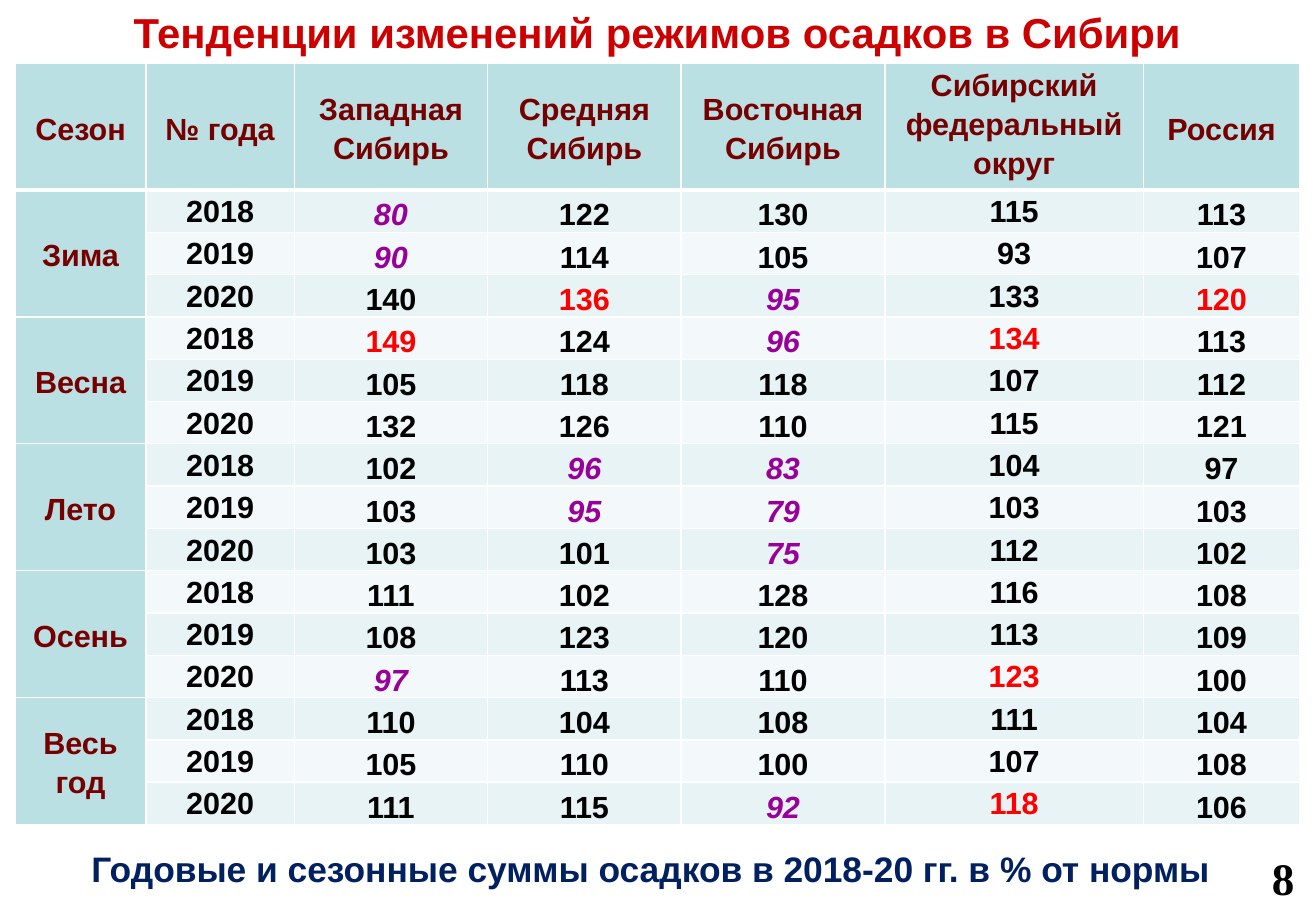
from lxml import etree
from pptx import Presentation
from pptx.dml.color import RGBColor
from pptx.enum.text import MSO_ANCHOR, MSO_AUTO_SIZE, PP_ALIGN
from pptx.oxml.ns import qn
from pptx.util import Inches, Pt

CENTER, JUSTIFY = PP_ALIGN.CENTER, PP_ALIGN.JUSTIFY
TOP, MIDDLE, BOTTOM = MSO_ANCHOR.TOP, MSO_ANCHOR.MIDDLE, MSO_ANCHOR.BOTTOM
NO_FIT, GROW = MSO_AUTO_SIZE.NONE, MSO_AUTO_SIZE.SHAPE_TO_FIT_TEXT
TITLE_ONLY = 5

COLORS = {
    "title": "CC0000",
    "caption": "002060",
    "heading": "760000",
    "text": "000000",
    "high": "FF0000",
    "low": "990099",
    "heading_fill": "BBE0E3",
    "odd_fill": "E7F3F4",
    "even_fill": "F3F9FA",
    "border": "FFFFFF",
}

HEADINGS = ["Сезон", "№ года", "Западная Сибирь", "Средняя Сибирь",
            "Восточная Сибирь", "Сибирский федеральный округ", "Россия"]
YEARS = ["2018", "2019", "2020"]
SEASONS = {
    "Зима": ["80- 122 130 115 113", "90- 114 105 93 107", "140 136+ 95- 133 120+"],
    "Весна": ["149+ 124 96- 134+ 113", "105 118 118 107 112", "132 126 110 115 121"],
    "Лето": ["102 96- 83- 104 97", "103 95- 79- 103 103", "103 101 75- 112 102"],
    "Осень": ["111 102 128 116 108", "108 123 120 113 109", "97- 113 110 123+ 100"],
    "Весь год": ["110 104 108 111 104", "105 110 100 107 108", "111 115 92- 118+ 106"],
}
MARKS = {"+": "high", "-": "low"}
COLUMN_WIDTHS = [1.13, 1.28, 1.67, 1.67, 1.76, 2.23, 1.35]
TABLE_HEIGHT, HEADING_HEIGHT = 6.57, 1.09
DISTRICT_COLUMN = HEADINGS.index("Сибирский федеральный округ")
TOP_COLUMNS = (1, DISTRICT_COLUMN)


def write(frame, text, size=19, font="Arial", color="text", italic=False,
          align=CENTER, spacing=1.0):
    paragraph = frame.paragraphs[0]
    paragraph.alignment = align
    paragraph.line_spacing = spacing
    run = paragraph.add_run()
    run.text = text
    run.font.size = Pt(size)
    run.font.name = font
    run.font.bold = True
    run.font.italic = italic
    run.font.color.rgb = RGBColor.from_string(COLORS[color])


class PrecipitationSlide:
    def __init__(self, deck):
        self.slide = deck.slides.add_slide(deck.slide_layouts[TITLE_ONLY])

    def set_margins(self, frame, side, end):
        frame.margin_left = frame.margin_right = Inches(side)
        frame.margin_top = frame.margin_bottom = Inches(end)

    def title(self, text, left, top, width, height):
        heading = self.slide.shapes.title
        heading.left, heading.top = Inches(left), Inches(top)
        heading.width, heading.height = Inches(width), Inches(height)
        frame = heading.text_frame
        frame.auto_size = NO_FIT
        frame.vertical_anchor = TOP
        self.set_margins(frame, 0.11, 0.06)
        write(frame, text, size=26, color="title")

    def label(self, text, left, top, width, height, margins, anchor=TOP, **style):
        box = self.slide.shapes.add_textbox(
            Inches(left), Inches(top), Inches(width), Inches(height))
        frame = box.text_frame
        frame.word_wrap = False
        frame.auto_size = GROW
        frame.vertical_anchor = anchor
        self.set_margins(frame, *margins)
        write(frame, text, align=JUSTIFY, **style)

    def borders(self, cell, top, bottom):
        properties = cell._tc.get_or_add_tcPr()
        for edge, points in (("L", 1), ("R", 1), ("T", top), ("B", bottom)):
            line = etree.SubElement(properties, qn(f"a:ln{edge}"), w=str(Pt(points)))
            fill = etree.SubElement(line, qn("a:solidFill"))
            etree.SubElement(fill, qn("a:srgbClr"), val=COLORS["border"])

    def cell(self, table, row, column, text, fill, anchor, **style):
        cell = table.cell(row, column)
        self.borders(cell, 3 if row == 1 else 1, 3 if row == 0 else 1)
        cell.fill.solid()
        cell.fill.fore_color.rgb = RGBColor.from_string(COLORS[fill])
        cell.vertical_anchor = anchor
        self.set_margins(cell, 0.09, 0)
        if text:
            write(cell.text_frame, text, spacing=1.15, **style)

    def table(self, left, top):
        row_count = 1 + len(SEASONS) * len(YEARS)
        table = self.slide.shapes.add_table(
            row_count, len(HEADINGS), Inches(left), Inches(top),
            Inches(sum(COLUMN_WIDTHS)), Inches(TABLE_HEIGHT)).table
        table.first_row = table.horz_banding = False
        for column, width in zip(table.columns, COLUMN_WIDTHS):
            column.width = Inches(width)
        for row in table.rows:
            row.height = Inches((TABLE_HEIGHT - HEADING_HEIGHT) / (row_count - 1))
        table.rows[0].height = Inches(HEADING_HEIGHT)

        for column, heading in enumerate(HEADINGS):
            anchor = TOP if column == DISTRICT_COLUMN else MIDDLE
            self.cell(table, 0, column, heading, "heading_fill", anchor, color="heading")
        for index, (season, records) in enumerate(SEASONS.items()):
            first = 1 + index * len(YEARS)
            for offset, (year, record) in enumerate(zip(YEARS, records)):
                row = first + offset
                self.cell(table, row, 0, "" if offset else season,
                          "heading_fill", MIDDLE, color="heading")
                band = "odd_fill" if row % 2 else "even_fill"
                for column, value in enumerate([year, *record.split()], 1):
                    color = MARKS.get(value[-1], "text")
                    anchor = TOP if column in TOP_COLUMNS else BOTTOM
                    self.cell(table, row, column, value.rstrip("+-"), band, anchor,
                              color=color, italic=color == "low")
            table.cell(first, 0).merge(table.cell(first + len(YEARS) - 1, 0))


def main():
    deck = Presentation()
    deck.slide_width, deck.slide_height = Inches(11.36), Inches(7.93)
    page = PrecipitationSlide(deck)
    page.title("Тенденции изменений режимов осадков в Сибири", 0, 0, 11.36, 0.58)
    page.table(0.13, 0.55)
    page.label("Годовые и сезонные суммы осадков в 2018-20 гг. в % от нормы",
               0.68, 7.25, 9.99, 0.48, (0.11, 0.06), MIDDLE, size=22, color="caption")
    page.label("8", 10.88, 7.29, 0.39, 0.57, (0.1, 0.05),
               size=28, font="Times New Roman")
    deck.save("out.pptx")


if __name__ == "__main__":
    main()
